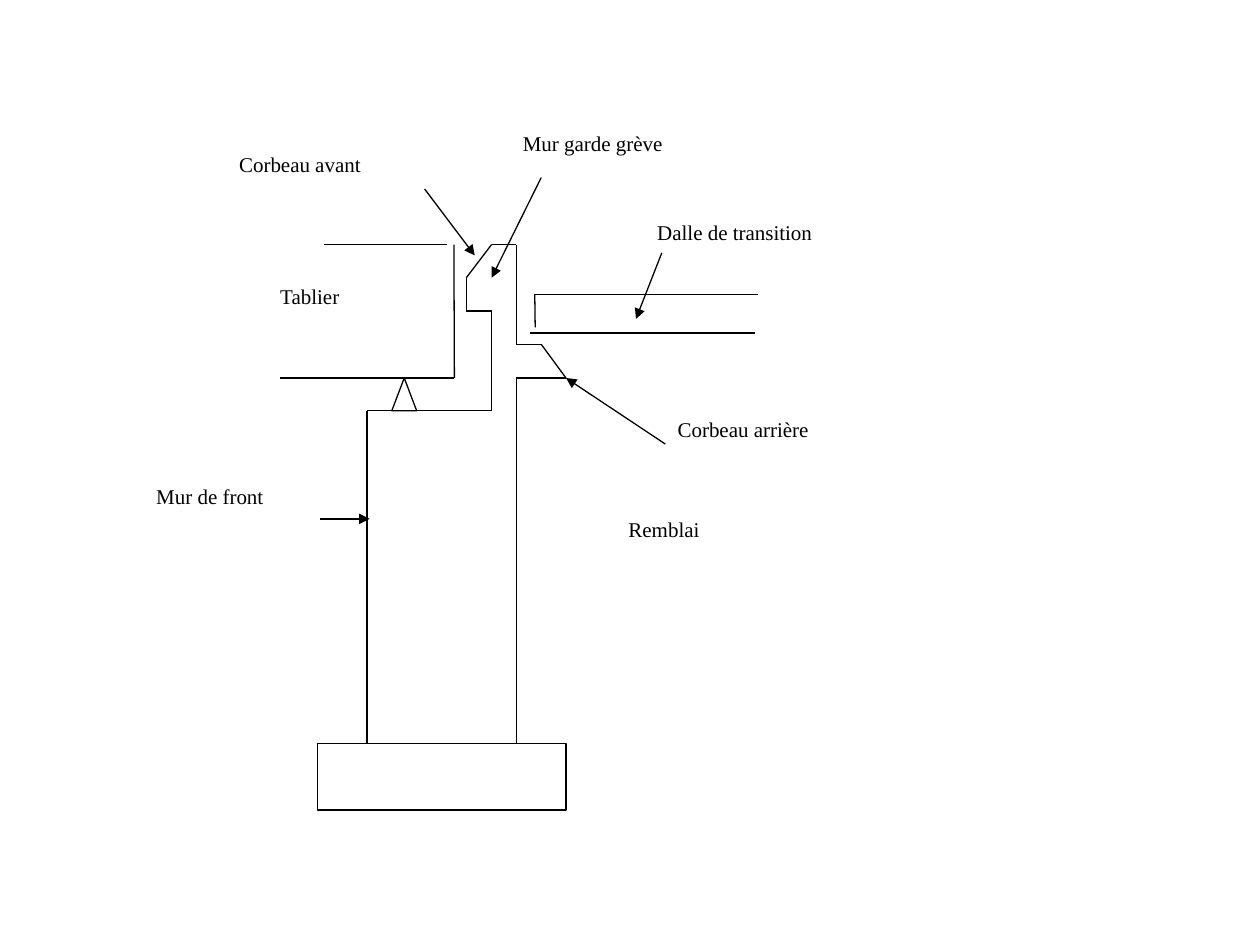
from itertools import pairwise

from lxml.etree import SubElement
from pptx import Presentation
from pptx.dml.color import RGBColor
from pptx.enum.shapes import MSO_CONNECTOR, MSO_SHAPE
from pptx.enum.text import MSO_ANCHOR, PP_ALIGN
from pptx.oxml.ns import qn
from pptx.util import Cm, Pt

BLACK, WHITE = "000000", "FFFFFF"
FONT = "Times New Roman"

# Levels shared by the parts of the abutment, in cm
DECK_TOP, CORBEL_EDGE, CORBEL_BASE = 4.93, 5.6, 6.27
REAR_TOP, DECK_BASE, SEAT, FOOTING_TOP = 6.94, 7.62, 8.28, 14.99
FRONT_FACE, REAR_FACE, REAR_TIP = 7.4, 10.41, 11.41

# Outlines: each is a chain of points (x, y) in cm
deck_top = [(6.53, DECK_TOP), (9.02, DECK_TOP)]
deck_end = [(9.15, DECK_TOP), (9.16, DECK_BASE), (5.65, DECK_BASE)]
abutment = [
    (FRONT_FACE, FOOTING_TOP), (FRONT_FACE, SEAT), (9.91, SEAT),
    (9.91, CORBEL_BASE), (9.4, CORBEL_BASE), (9.4, CORBEL_EDGE),
    (9.91, DECK_TOP), (REAR_FACE, DECK_TOP), (REAR_FACE, REAR_TOP),
    (10.91, REAR_TOP), (REAR_TIP, DECK_BASE), (REAR_FACE, DECK_BASE),
    (REAR_FACE, FOOTING_TOP),
]
transition_slab = [(10.79, 6.6), (10.78, 5.93), (15.29, 5.93)]
slab_underside = [(10.69, 6.71), (15.21, 6.71)]
outlines = [deck_top, deck_end, abutment, transition_slab, slab_underside]

# Solid parts: preset, (left, top, width, height) in cm
bearing = (MSO_SHAPE.FLOWCHART_EXTRACT, (7.9, DECK_BASE, 0.5, SEAT - DECK_BASE))
footing = (MSO_SHAPE.RECTANGLE, (6.4, FOOTING_TOP, 5.01, 1.34))

# Labels: text, box in cm
labels = [
    ("Remblai", (12.42, 10.29, 3, 1.34)),
    ("Corbeau arrière", (13.41, SEAT, 4.5, 1.34)),
    ("Dalle de transition", (13, 4.31, 5.5, 1.34)),
    ("Mur garde grève", (10.29, 2.51, 5, 1.95)),
    ("Tablier", (5.4, CORBEL_EDGE, 2.51, 1.34)),
    ("Mur de front", (2.9, 9.62, 4, 2)),
    ("Corbeau avant", (4.57, 2.93, 4.5, 1.34)),
]

# Pointers: label, start, tip
pointers = [
    ("Corbeau avant", (8.56, 3.81), (9.57, 5.15)),
    ("Mur garde grève", (10.91, 3.58), (9.91, CORBEL_EDGE)),
    ("Dalle de transition", (13.34, 5.1), (12.82, 6.43)),
    ("Corbeau arrière", (13.41, 8.95), (REAR_TIP, DECK_BASE)),
    ("Mur de front", (6.45, 10.46), (7.45, 10.46)),
]


def color(hex_value):
    return RGBColor.from_string(hex_value)


def draw_line(start, end):
    line = slide.shapes.add_connector(
        MSO_CONNECTOR.STRAIGHT, *(Cm(v) for v in (*start, *end)))
    line.line.color.rgb = color(BLACK)
    line.line.width = Pt(0.75)
    SubElement(line._element.spPr, qn("a:effectLst"))
    return line


def draw_part(preset, box, border):
    part = slide.shapes.add_shape(preset, *(Cm(v) for v in box))
    part.shadow.inherit = False
    part.fill.solid()
    part.fill.fore_color.rgb = color(WHITE)
    part.line.color.rgb = color(border)
    part.line.width = Pt(0.75)
    return part


def draw_label(text, box):
    label = draw_part(MSO_SHAPE.RECTANGLE, box, WHITE)
    frame = label.text_frame
    frame.word_wrap = True
    frame.vertical_anchor = MSO_ANCHOR.TOP
    paragraph = frame.paragraphs[0]
    paragraph.alignment = PP_ALIGN.LEFT
    run = paragraph.add_run()
    run.text = text
    run.font.name = FONT
    run.font.size = Pt(12)
    run.font.color.rgb = color(BLACK)
    return label


prs = Presentation()
prs.slide_width, prs.slide_height = Cm(25.4), Cm(19.05)
slide = prs.slides.add_slide(prs.slide_layouts[6])

# Structure
for part in (bearing, footing):
    draw_part(*part, BLACK)
for outline in outlines:
    for start, end in pairwise(outline):
        draw_line(start, end)

# Labels and their pointers
label_boxes = {text: draw_label(text, box) for text, box in labels}
for text, start, tip in pointers:
    pointer = draw_line(start, tip)
    SubElement(pointer.line._get_or_add_ln(), qn("a:tailEnd"), type="triangle")
    if text == "Corbeau arrière":
        pointer.begin_connect(label_boxes[text], 1)

prs.save("out.pptx")
